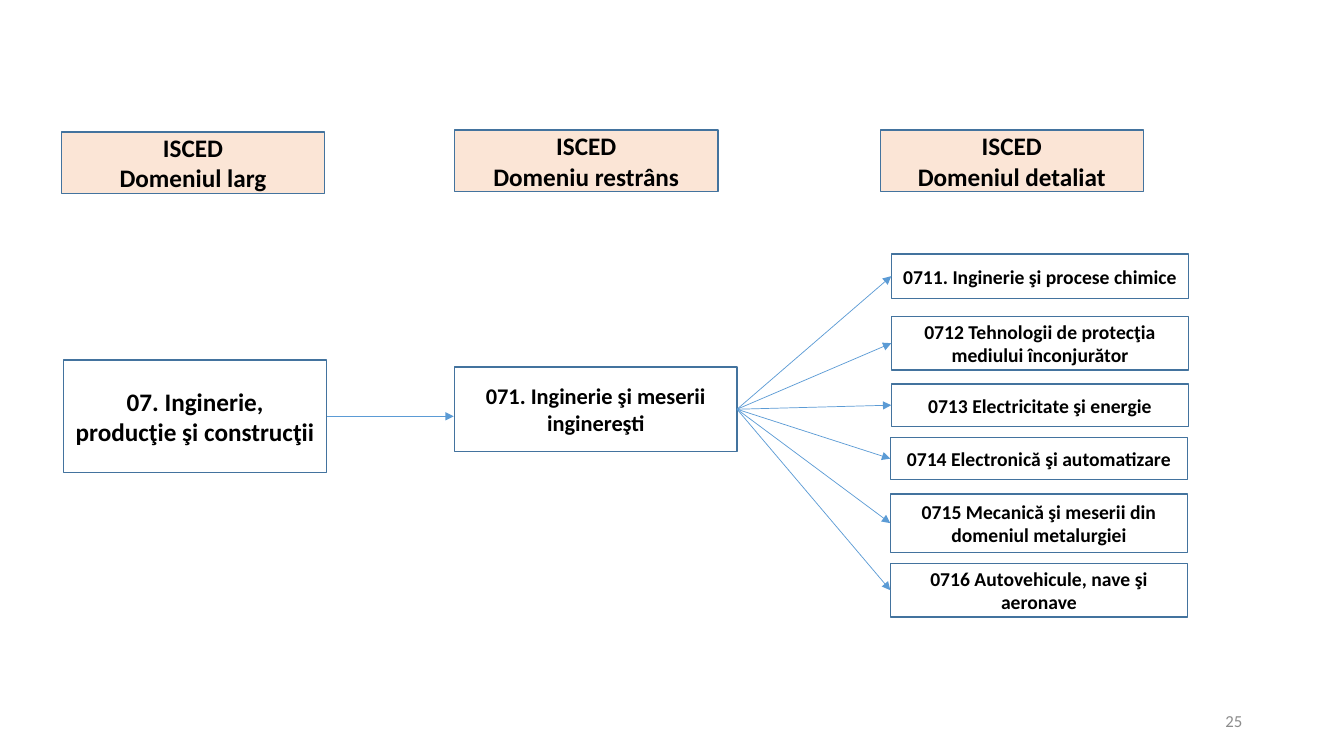
from pptx import Presentation
from pptx import util as u
from pptx.dml.color import RGBColor
from pptx.enum import shapes, text
from pptx.oxml import parse_xml
from pptx.oxml.ns import nsdecls

PX = 9144  # EMU per px, 100 px to the inch
BORDER, ARROW, PEACH, BLACK, GREY = "43739E", "5B9BD5", "FBE5D6", "000000", "8C8C8C"
RECT_LEFT, RECT_RIGHT = 1, 3  # connection sites of a rectangle

HEADERS = [
    ((61, 131), "Domeniul larg"),
    ((451, 129), "Domeniu restrâns"),
    ((873, 129), "Domeniul detaliat"),
]
DETAILED_FIELDS = [  # left and top offset, height, wording
    (1, 0, 44, "0711. Inginerie şi procese chimice"),
    (1, 62, 53, "0712 Tehnologii de protecţia mediului înconjurător"),
    (1, 129, 42, "0713 Electricitate şi energie"),
    (0, 182, 42, "0714 Electronică şi automatizare"),
    (0, 238, 58, "0715 Mecanică şi meserii din domeniul metalurgiei"),
    (0, 307, 53, "0716 Autovehicule, nave şi aeronave"),
]


def px(*lengths):
    return [u.Emu(length * PX) for length in lengths]


def color(hex_string):
    return RGBColor.from_string(hex_string)


def write(frame, lines, size, hex_color, bold, align):
    frame.word_wrap = True
    frame.vertical_anchor = text.MSO_ANCHOR.MIDDLE
    for number, line in enumerate(lines):
        para = frame.add_paragraph() if number else frame.paragraphs[0]
        para.text = line
        para.alignment = align
        para.font.name = "Calibri"
        para.font.size = u.Pt(size)
        para.font.bold = bold
        para.font.color.rgb = color(hex_color)


def add_field(page, box, lines, size, fill=None):
    """Add a bordered box with bold centred lines."""
    field = page.shapes.add_shape(shapes.MSO_SHAPE.RECTANGLE, *px(*box))
    field.shadow.inherit = False
    if fill:
        field.fill.solid()
        field.fill.fore_color.rgb = color(fill)
    else:
        field.fill.background()
    field.line.color.rgb = color(BORDER)
    field.line.width = u.Pt(1)
    write(field.text_frame, lines, size, BLACK, True, text.PP_ALIGN.CENTER)
    return field


def add_arrow(page, source, end):
    """Add an arrow from the right side of source to the point end."""
    arrow = page.shapes.add_connector(shapes.MSO_CONNECTOR.STRAIGHT, 0, 0, *end)
    arrow.begin_connect(source, RECT_RIGHT)
    arrow.line.color.rgb = color(ARROW)
    arrow.line.width = u.Pt(0.5)
    arrow.line._get_or_add_ln().append(
        parse_xml(f'<a:tailEnd {nsdecls("a")} type="triangle"/>'))
    arrow._element.spPr.append(parse_xml(f'<a:effectLst {nsdecls("a")}/>'))
    return arrow


def add_headers(page):
    for corner, level in HEADERS:
        add_field(page, (*corner, 261, 61), ["ISCED", level], 18, PEACH)


def add_detailed_fields(page, source, left, top, width):
    """Stack the detailed fields and fan arrows out to them."""
    for shift, offset, height, wording in DETAILED_FIELDS:
        box = (left + shift, top + offset, width, height)
        field = add_field(page, box, [wording], 14)
        arrow = add_arrow(page, source, (field.left, field.top))
        arrow.end_connect(field, RECT_LEFT)


def add_page_number(page, box, number):
    holder = page.shapes.add_textbox(*px(*box))
    write(holder.text_frame, [number], 12, GREY, False, text.PP_ALIGN.RIGHT)


def main():
    deck = Presentation()
    deck.slide_width, deck.slide_height = px(1333, 750)
    page = deck.slides.add_slide(deck.slide_layouts[6])
    add_headers(page)
    broad = add_field(page, (63, 357, 261, 112),
                      ["07. Inginerie, producţie şi construcţii"], 18)
    narrow = add_field(page, (451, 364, 280, 84),
                       ["071. Inginerie şi meserii inginereşti"], 16)
    add_arrow(page, broad, px(450, 413))
    add_detailed_fields(page, narrow, 883, 252, 295)
    add_page_number(page, (942, 695, 300, 40), "25")
    deck.save("out.pptx")


if __name__ == "__main__":
    main()
